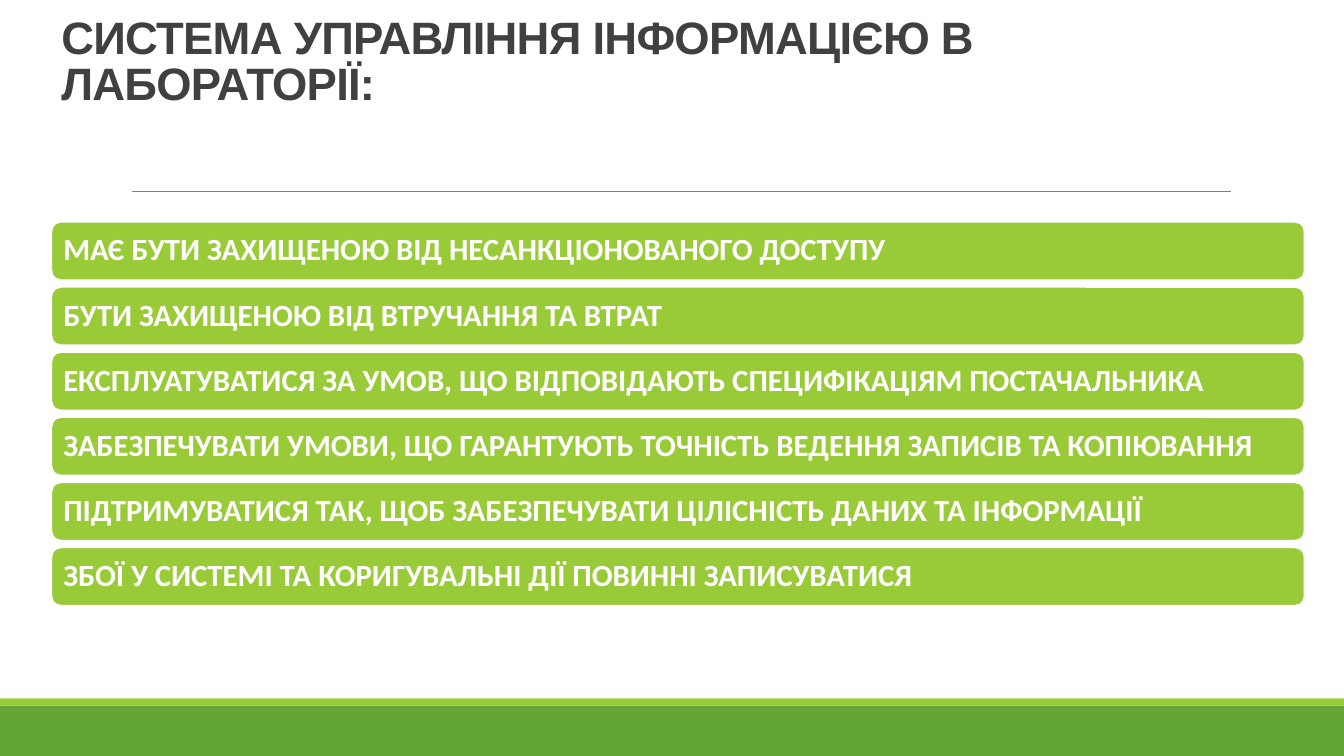
from dataclasses import dataclass

from lxml import etree
from pptx import Presentation
from pptx.dml.color import RGBColor
from pptx.enum.shapes import MSO_CONNECTOR, MSO_SHAPE
from pptx.enum.text import MSO_ANCHOR, PP_ALIGN
from pptx.oxml.ns import qn
from pptx.util import Inches, Pt

STRAIGHT = MSO_CONNECTOR.STRAIGHT
RECTANGLE = MSO_SHAPE.RECTANGLE
ROUNDED = MSO_SHAPE.ROUNDED_RECTANGLE
BOTTOM = MSO_ANCHOR.BOTTOM
MIDDLE = MSO_ANCHOR.MIDDLE
LEFT = PP_ALIGN.LEFT

TITLE = "СИСТЕМА УПРАВЛІННЯ ІНФОРМАЦІЄЮ В ЛАБОРАТОРІЇ:"
REQUIREMENTS = [
    "МАЄ БУТИ ЗАХИЩЕНОЮ ВІД НЕСАНКЦІОНОВАНОГО ДОСТУПУ",
    "БУТИ ЗАХИЩЕНОЮ ВІД ВТРУЧАННЯ ТА ВТРАТ",
    "ЕКСПЛУАТУВАТИСЯ ЗА УМОВ, ЩО ВІДПОВІДАЮТЬ СПЕЦИФІКАЦІЯМ ПОСТАЧАЛЬНИКА",
    "ЗАБЕЗПЕЧУВАТИ УМОВИ, ЩО ГАРАНТУЮТЬ ТОЧНІСТЬ ВЕДЕННЯ ЗАПИСІВ ТА КОПІЮВАННЯ",
    "ПІДТРИМУВАТИСЯ ТАК, ЩОБ ЗАБЕЗПЕЧУВАТИ ЦІЛІСНІСТЬ ДАНИХ ТА ІНФОРМАЦІЇ",
    "ЗБОЇ У СИСТЕМІ ТА КОРИГУВАЛЬНІ ДІЇ ПОВИННІ ЗАПИСУВАТИСЯ",
]
MARGIN, CONTENT_WIDTH = 0.51, 12.43
FIRST_TOP, LAST_TOP, BAR_HEIGHT = 2.2, 5.43, 0.58


@dataclass(frozen=True)
class Theme:
    """Colours, fonts and type sizes of the slide."""

    lime: RGBColor = RGBColor.from_string("99CB38")
    green: RGBColor = RGBColor.from_string("63A537")
    white: RGBColor = RGBColor.from_string("FFFFFF")
    ink: RGBColor = RGBColor.from_string("404040")
    rule: RGBColor = RGBColor.from_string("808080")
    title_font: str = "Arial"
    body_font: str = "Calibri"
    title_size: float = 32.4
    body_size: float = 22


class SlideBuilder:
    """Draws styled elements on the current slide."""

    def __init__(self, page, theme):
        self.page = page
        self.theme = theme

    def add_text(self, frame, text, font, size, color, line_spacing):
        frame.word_wrap = True
        para = frame.paragraphs[0]
        para.alignment = LEFT
        para.line_spacing = line_spacing
        span = para.add_run()
        span.text = text
        span.font.name = font
        span.font.size = Pt(size)
        span.font.bold = True
        span.font.color.rgb = color
        return span

    def block(self, kind, left, top, width, height, fill):
        box = self.page.shapes.add_shape(
            kind, Inches(left), Inches(top), Inches(width), Inches(height))
        box.shadow.inherit = False
        box.fill.solid()
        box.fill.fore_color.rgb = fill
        box.line.fill.background()
        return box

    def rule(self, left, right, top):
        line = self.page.shapes.add_connector(
            STRAIGHT, Inches(left), Inches(top), Inches(right), Inches(top))
        line.line.color.rgb = self.theme.rule
        line.line.width = Pt(0.5)
        etree.SubElement(line._element.spPr, qn("a:effectLst"))

    def title(self, text, left, top, width, height):
        theme = self.theme
        box = self.page.shapes.add_textbox(
            Inches(left), Inches(top), Inches(width), Inches(height))
        frame = box.text_frame
        frame.vertical_anchor = BOTTOM
        frame.margin_right = Inches(0.3)
        span = self.add_text(
            frame, text, theme.title_font, theme.title_size, theme.ink, 0.85)
        span._r.get_or_add_rPr().set("spc", "-50")

    def bar(self, text, left, top, width, height):
        theme = self.theme
        box = self.block(ROUNDED, left, top, width, height, theme.lime)
        box.line.color.rgb = theme.white
        box.line.width = Pt(1.25)
        frame = box.text_frame
        frame.vertical_anchor = MIDDLE
        frame.margin_left = frame.margin_right = Inches(0.09)
        frame.margin_top = frame.margin_bottom = Inches(0.05)
        self.add_text(
            frame, text, theme.body_font, theme.body_size, theme.white, 0.9)


def main():
    deck = Presentation()
    deck.slide_width = Inches(13.33)
    deck.slide_height = Inches(7.5)
    theme = Theme()
    builder = SlideBuilder(deck.slides.add_slide(deck.slide_layouts[6]), theme)
    builder.block(RECTANGLE, 0, 7, 13.33, 0.5, theme.green)
    builder.block(RECTANGLE, 0, 6.93, 13.33, 0.07, theme.lime)
    builder.rule(1.31, 12.21, 1.9)
    builder.title(TITLE, MARGIN, 0.33, CONTENT_WIDTH, 0.81)
    step = (LAST_TOP - FIRST_TOP) / (len(REQUIREMENTS) - 1)
    for index, requirement in enumerate(REQUIREMENTS):
        builder.bar(requirement, MARGIN, FIRST_TOP + index * step,
                    CONTENT_WIDTH, BAR_HEIGHT)
    deck.save("out.pptx")


if __name__ == "__main__":
    main()
